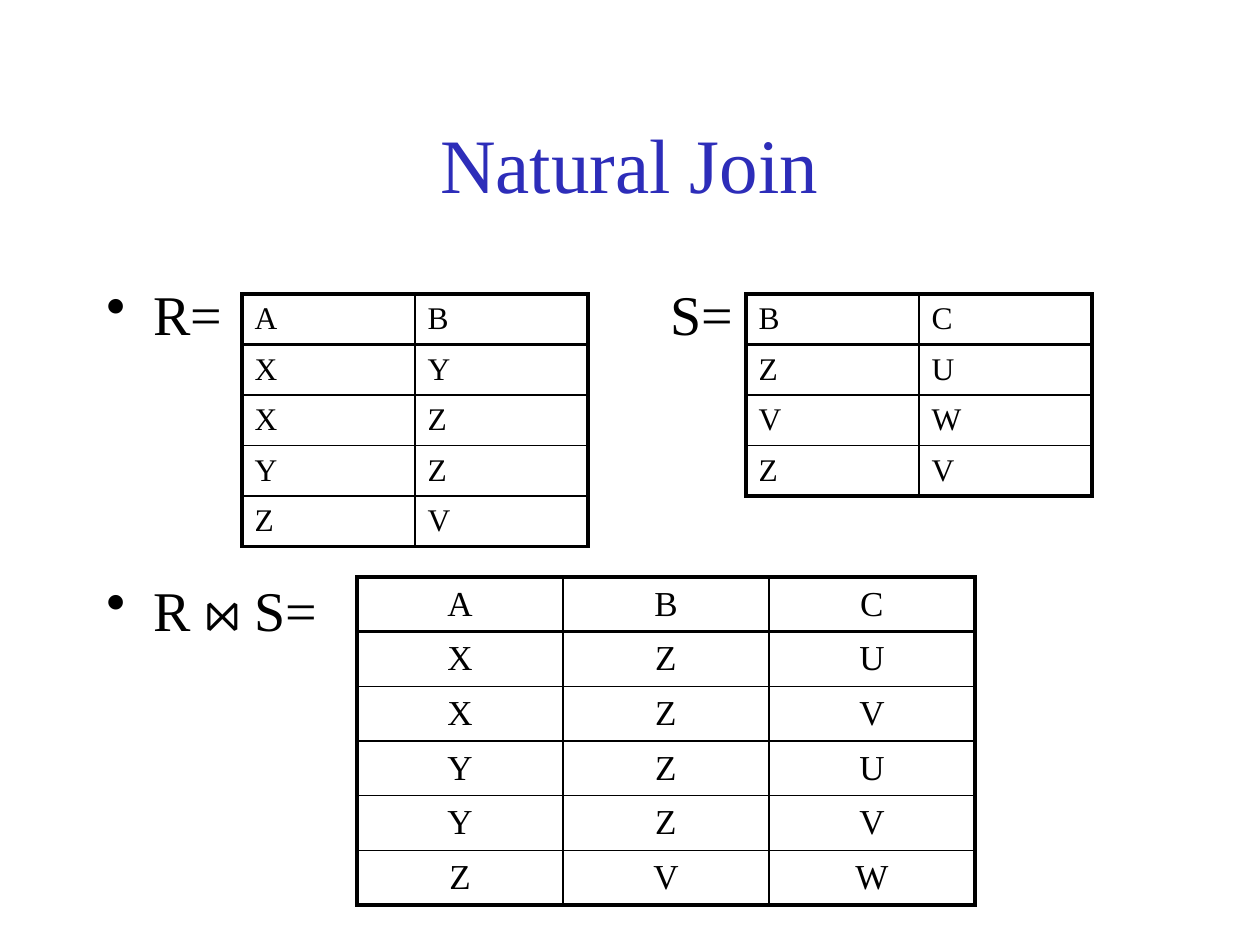
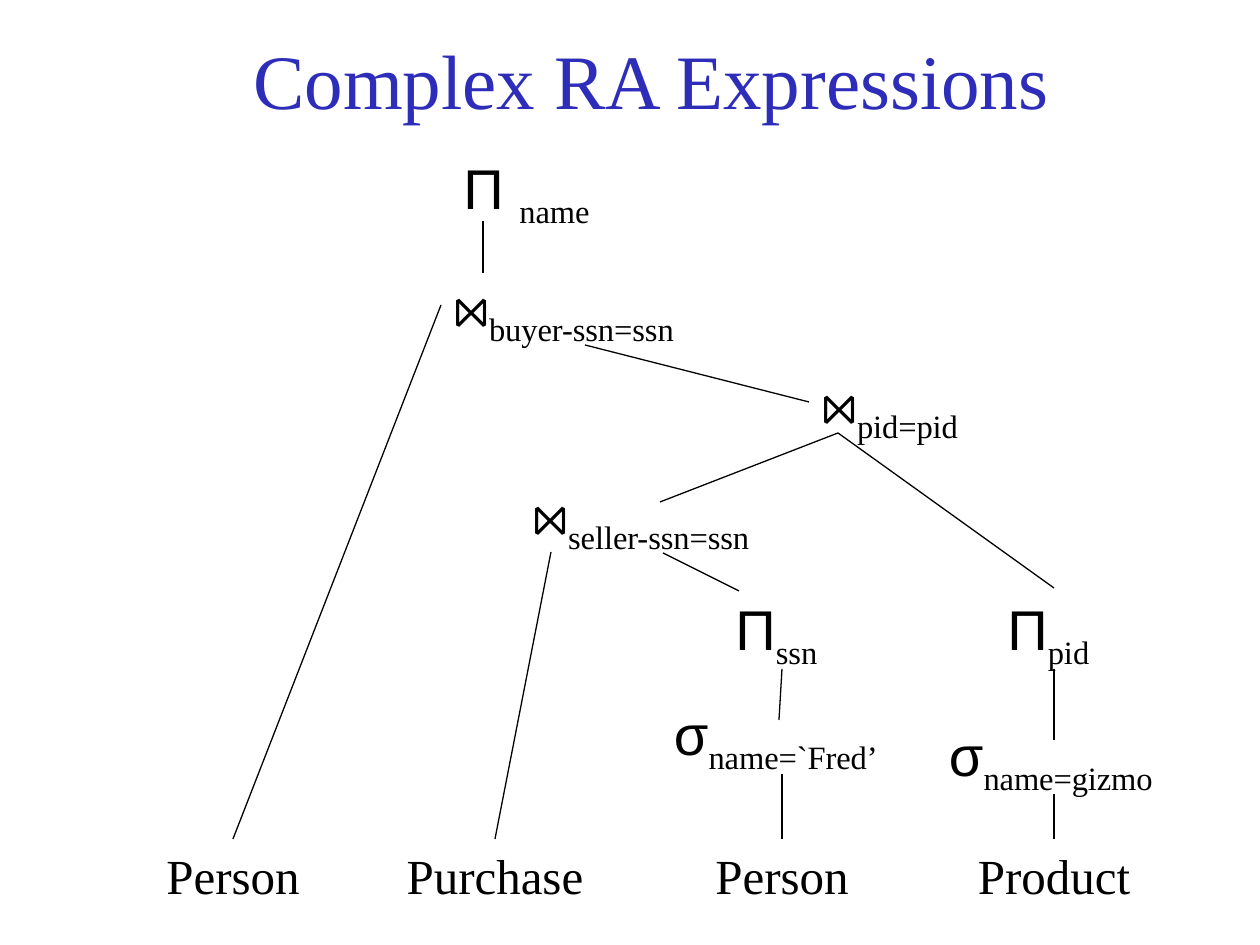
from dataclasses import dataclass

from lxml.etree import SubElement
from pptx import Presentation
from pptx.dml.color import RGBColor
from pptx.enum.shapes import MSO_CONNECTOR as Connector
from pptx.enum.text import MSO_ANCHOR as Anchor, MSO_AUTO_SIZE as AutoSize, PP_ALIGN as Align
from pptx.oxml.ns import qn
from pptx.util import Emu, Pt

PX_PER_INCH = 126


@dataclass(frozen=True)
class Theme:
    title_color: RGBColor = RGBColor(0x2D, 0x2D, 0xB9)
    ink: RGBColor = RGBColor(0, 0, 0)
    serif: str = "Times New Roman"
    symbol: str = "Arial"
    title_size: int = 44
    body_size: int = 32
    leaf_size: int = 28
    input_size: int = 18
    result_size: int = 20
    thick: float = 2.25
    thin: float = 1
    edge: float = 0.75


THEME = Theme()


def px(length):
    return Emu(round(length * 914400 / PX_PER_INCH))


# Text
def style_run(run, size, font=THEME.serif, color=THEME.ink):
    run.font.size = Pt(size)
    run.font.name = font
    run.font.color.rgb = color


def add_text_box(slide, left, top, width, height, wrap=True):
    shape = slide.shapes.add_textbox(px(left), px(top), px(width), px(height))
    shape.text_frame.word_wrap = wrap
    return shape.text_frame


def add_line_of_text(slide, text, box, size, color=THEME.ink, anchor=Anchor.TOP):
    text_frame = add_text_box(slide, *box)
    text_frame.text = text
    text_frame.vertical_anchor = anchor
    paragraph = text_frame.paragraphs[0]
    paragraph.alignment = Align.CENTER
    style_run(paragraph.runs[0], size, color=color)


def add_title(slide, text, left, top):
    add_line_of_text(slide, text, (left, top, 1071, 158), THEME.title_size,
                     THEME.title_color, Anchor.MIDDLE)


def add_bullets(slide, bullets, box, tab):
    """Each bullet is a pair: text and space before in points."""
    text_frame = add_text_box(slide, *box)
    for index, (text, space) in enumerate(bullets):
        paragraph = text_frame.add_paragraph() if index else text_frame.paragraphs[0]
        paragraph.text = text
        paragraph.space_before = Pt(space)
        for run in paragraph.runs:
            style_run(run, THEME.body_size)
        properties = paragraph._p.get_or_add_pPr()
        properties.set("marL", str(px(47)))
        properties.set("indent", str(-px(47)))
        SubElement(properties, qn("a:buChar"), char="•")
        tabs = SubElement(properties, qn("a:tabLst"))
        SubElement(tabs, qn("a:tab"), pos=str(px(tab)), algn="l")


# Tables
def set_borders(cell, widths):
    properties = cell._tc.get_or_add_tcPr()
    for position, (side, width) in enumerate(widths.items()):
        line = properties.makeelement(qn(f"a:ln{side}"), {"w": str(Pt(width))})
        fill = SubElement(line, qn("a:solidFill"))
        SubElement(fill, qn("a:srgbClr"), val=str(THEME.ink))
        properties.insert(position, line)


def add_relation(slide, rows, left, top, column_width, row_heights, size, align=Align.LEFT):
    row_count, column_count = len(rows), len(rows[0])
    frame = slide.shapes.add_table(row_count, column_count, px(left), px(top),
                                   px(column_width * column_count), px(sum(row_heights)))
    table = frame.table
    table.first_row = table.horz_banding = False
    for column in table.columns:
        column.width = px(column_width)
    for row, height in zip(table.rows, row_heights):
        row.height = px(height)

    def weight(is_thick):
        return THEME.thick if is_thick else THEME.thin

    for r, values in enumerate(rows):
        for c, value in enumerate(values):
            cell = table.cell(r, c)
            cell.text = value
            cell.vertical_anchor = Anchor.MIDDLE
            cell.fill.background()
            paragraph = cell.text_frame.paragraphs[0]
            paragraph.alignment = align
            style_run(paragraph.runs[0], size)
            # Outline and header rule are thick
            set_borders(cell, {"L": weight(c == 0),
                               "R": weight(c == column_count - 1),
                               "T": weight(r <= 1),
                               "B": weight(r in (0, row_count - 1))})


# Expression tree
def add_operator(slide, symbol, subscript, left, top, width):
    text_frame = add_text_box(slide, left, top, width, 80, wrap=False)
    text_frame.auto_size = AutoSize.SHAPE_TO_FIT_TEXT
    paragraph = text_frame.paragraphs[0]
    for text in (symbol, subscript):
        paragraph.add_run().text = text
    symbol_run, subscript_run = paragraph.runs
    style_run(symbol_run, THEME.body_size, THEME.serif if symbol == "⋈" else THEME.symbol)
    style_run(subscript_run, THEME.body_size)
    subscript_run._r.get_or_add_rPr().set("baseline", "-25000")


def add_edge(slide, start, end):
    connector = slide.shapes.add_connector(Connector.STRAIGHT, *map(px, start + end))
    connector.line.color.rgb = THEME.ink
    connector.line.width = Pt(THEME.edge)
    SubElement(connector._element.spPr, qn("a:effectLst"))


# Slides
def build_natural_join(slide):
    add_title(slide, "Natural Join", 94, 84)
    add_bullets(slide, [("R=\tS=", 5), ("R ⋈ S=", 131)], (94, 273, 1071, 567), tab=564)
    add_relation(slide, ["AB", "XY", "XZ", "YZ", "ZV"], 242, 294, 173,
                 [47, 47, 47, 50, 47], THEME.input_size)
    add_relation(slide, ["BC", "ZU", "VW", "ZV"], 746, 294, 173, [47] * 4, THEME.input_size)
    add_relation(slide, ["ABC", "XZU", "XZV", "YZU", "YZV", "ZVW"], 357, 577, 206,
                 [51, 51, 51, 51, 54, 51], THEME.result_size, Align.CENTER)


def build_complex_expressions(slide):
    add_title(slide, "Complex RA Expressions", 116, 0)

    operators = [
        ("Π ", "name", 451, 147, 163),
        ("⋈", "buyer-ssn=ssn", 441, 265, 287),
        ("⋈", "pid=pid", 809, 362, 189),
        ("⋈", "seller-ssn=ssn", 520, 473, 282),
        ("Π", "ssn", 723, 588, 117),
        ("Π", "pid", 995, 588, 117),
        (" σ", "name=`Fred’", 646, 693, 271),
        (" σ", "name=gizmo", 921, 714, 266),
    ]
    for operator in operators:
        add_operator(slide, *operator)

    leaf_top = 839
    leaves = [("Person", 233), ("Purchase", 495), ("Person", 782), ("Product", 1054)]
    for name, center in leaves:
        add_line_of_text(slide, name, (center - 109, leaf_top, 218, 72), THEME.leaf_size)

    buyer_x, purchase_x, seller_x, product_x = (center for _, center in leaves)
    pid_join = (838, 433)
    edges = [
        ((483, 221), (483, 273)),
        ((441, 305), (buyer_x, leaf_top)),
        ((585, 345), (809, 402)),
        (pid_join, (660, 502)),
        (pid_join, (product_x, 588)),
        ((551, 552), (purchase_x, leaf_top)),
        ((663, 553), (739, 591)),
        ((seller_x, 669), (779, 720)),
        ((seller_x, 774), (seller_x, leaf_top)),
        ((product_x, 669), (product_x, 740)),
        ((product_x, 794), (product_x, leaf_top)),
    ]
    for start, end in edges:
        add_edge(slide, start, end)


def main():
    presentation = Presentation()
    presentation.slide_width, presentation.slide_height = px(1260), px(945)
    blank = presentation.slide_layouts[6]
    for build in (build_natural_join, build_complex_expressions):
        build(presentation.slides.add_slide(blank))
    presentation.save("out.pptx")


if __name__ == "__main__":
    main()
